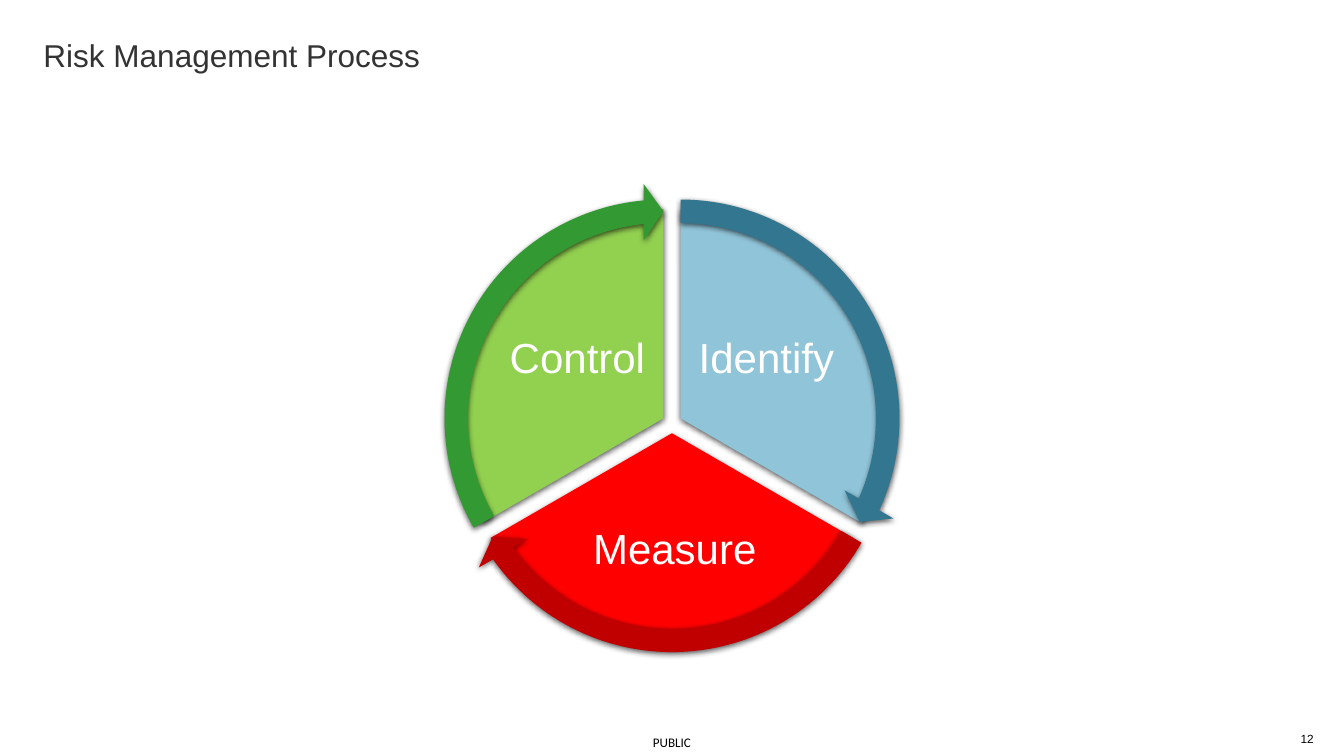
import math

import pptx
import pptx.dml.color
import pptx.enum.shapes
import pptx.enum.text
import pptx.oxml
import pptx.oxml.ns
import pptx.util

Inches = pptx.util.Inches
RGBColor = pptx.dml.color.RGBColor
MSO_SHAPE = pptx.enum.shapes.MSO_SHAPE
ANCHOR = pptx.enum.text.MSO_ANCHOR
ALIGN = pptx.enum.text.PP_ALIGN

BLACK = RGBColor(0x00, 0x00, 0x00)
WHITE = RGBColor(0xFF, 0xFF, 0xFF)
DARK_GREY = RGBColor(0x33, 0x33, 0x33)
LIGHT_BLUE = RGBColor(0x90, 0xC4, 0xD8)
DEEP_BLUE = RGBColor(0x33, 0x76, 0x90)
RED = RGBColor(0xFF, 0x00, 0x00)
DARK_RED = RGBColor(0xC0, 0x00, 0x00)
LIGHT_GREEN = RGBColor(0x92, 0xD0, 0x50)
GREEN = RGBColor(0x33, 0x99, 0x33)

# Content: label, start angle, pie colour, arrow colour, label box
STEPS = [
    ("Identify", 270, LIGHT_BLUE, DEEP_BLUE, (7.32, 3.15, 1.58, 1.32)),
    ("Measure", 30, RED, DARK_RED, (5.95, 5.25, 2.38, 1.16)),
    ("Control", 150, LIGHT_GREEN, GREEN, (5.32, 3.15, 1.58, 1.32)),
]
# Text, box, size, font, colour, alignment, anchor, line spacing
PAGE_TEXTS = [
    ("12", (13.49, 7.74, 0.41, 0.15), 9, "Arial", BLACK, ALIGN.RIGHT, ANCHOR.MIDDLE, 1.0),
    ("PUBLIC", (6.76, 7.71, 0.7, 0.29), 10, "Calibri", BLACK, ALIGN.CENTER, ANCHOR.MIDDLE, 1.0),
    ("Risk Management Process", (0.46, 0.46, 13.31, 0.33), 24, "Arial", DARK_GREY,
     ALIGN.LEFT, ANCHOR.TOP, 0.8),
]

# Geometry of the cycle, in inches and degrees
CENTER_X, CENTER_Y = 7.11, 4.48
SECTOR_SWEEP = 120
SECTOR_OFFSET = 0.105
PIE_SIZE, ARROW_SIZE = 4.43, 4.98
ARROW_THICKNESS, ARROW_HEAD_WIDTH = 0.05, 0.06
ARROW_HEAD_ANGLE = 5.46
ANGLE_UNIT = 0.6  # adjustment value of one degree

SHADOW = (
    '<a:outerShdw %s blurRad="57150" dist="19050" dir="5400000" algn="ctr" rotWithShape="0">'
    '<a:srgbClr val="000000"><a:alpha val="63000"/></a:srgbClr></a:outerShdw>'
    % pptx.oxml.ns.nsdecls("a")
)


def add_text(slide, text, box, size, font, color, alignment, anchor, spacing, inset=0):
    shape = slide.shapes.add_textbox(*map(Inches, box))
    frame = shape.text_frame
    frame.word_wrap = True
    frame.vertical_anchor = anchor
    frame.margin_left = frame.margin_right = Inches(inset)
    frame.margin_top = frame.margin_bottom = Inches(inset)
    paragraph = frame.paragraphs[0]
    paragraph.alignment = alignment
    paragraph.line_spacing = spacing
    run = paragraph.add_run()
    run.text = text
    run.font.size = pptx.util.Pt(size)
    run.font.name = font
    run.font.color.rgb = color


def add_sector_part(slide, kind, start, size, color, adjustments):
    """Place a part around the center, pushed out along its sector's bisector."""
    bisector = math.radians(start + SECTOR_SWEEP / 2)
    left = CENTER_X + SECTOR_OFFSET * math.cos(bisector) - size / 2
    top = CENTER_Y + SECTOR_OFFSET * math.sin(bisector) - size / 2
    shape = slide.shapes.add_shape(kind, Inches(left), Inches(top), Inches(size), Inches(size))
    for index, value in enumerate(adjustments):
        shape.adjustments[index] = value
    shape.fill.solid()
    shape.fill.fore_color.rgb = color
    shape.line.fill.background()
    shape.shadow.inherit = False
    effects = shape._element.spPr.find(pptx.oxml.ns.qn("a:effectLst"))
    effects.append(pptx.oxml.parse_xml(SHADOW))


def main():
    presentation = pptx.Presentation()
    presentation.slide_width = Inches(14.22)
    presentation.slide_height = Inches(8)
    slide = presentation.slides.add_slide(presentation.slide_layouts[6])

    # Pie sectors with their labels
    for label, start, pie_color, _, box in STEPS:
        end = (start + SECTOR_SWEEP) % 360
        add_sector_part(slide, MSO_SHAPE.PIE, start, PIE_SIZE, pie_color,
                        (start * ANGLE_UNIT, end * ANGLE_UNIT))
        add_text(slide, label, box, 32, "Arial", WHITE, ALIGN.CENTER, ANCHOR.MIDDLE, 0.9, 0.04)

    # Arrows around the sectors
    for _, start, _, arrow_color, _ in STEPS:
        end = (start + SECTOR_SWEEP) % 360 - ARROW_HEAD_ANGLE
        add_sector_part(slide, MSO_SHAPE.CIRCULAR_ARROW, start, ARROW_SIZE, arrow_color,
                        (ARROW_THICKNESS, ARROW_HEAD_ANGLE * ANGLE_UNIT, end * ANGLE_UNIT,
                         start * ANGLE_UNIT, ARROW_HEAD_WIDTH))

    # Page number, footer and title
    for page_text in PAGE_TEXTS:
        add_text(slide, *page_text)

    presentation.save("out.pptx")


if __name__ == "__main__":
    main()
